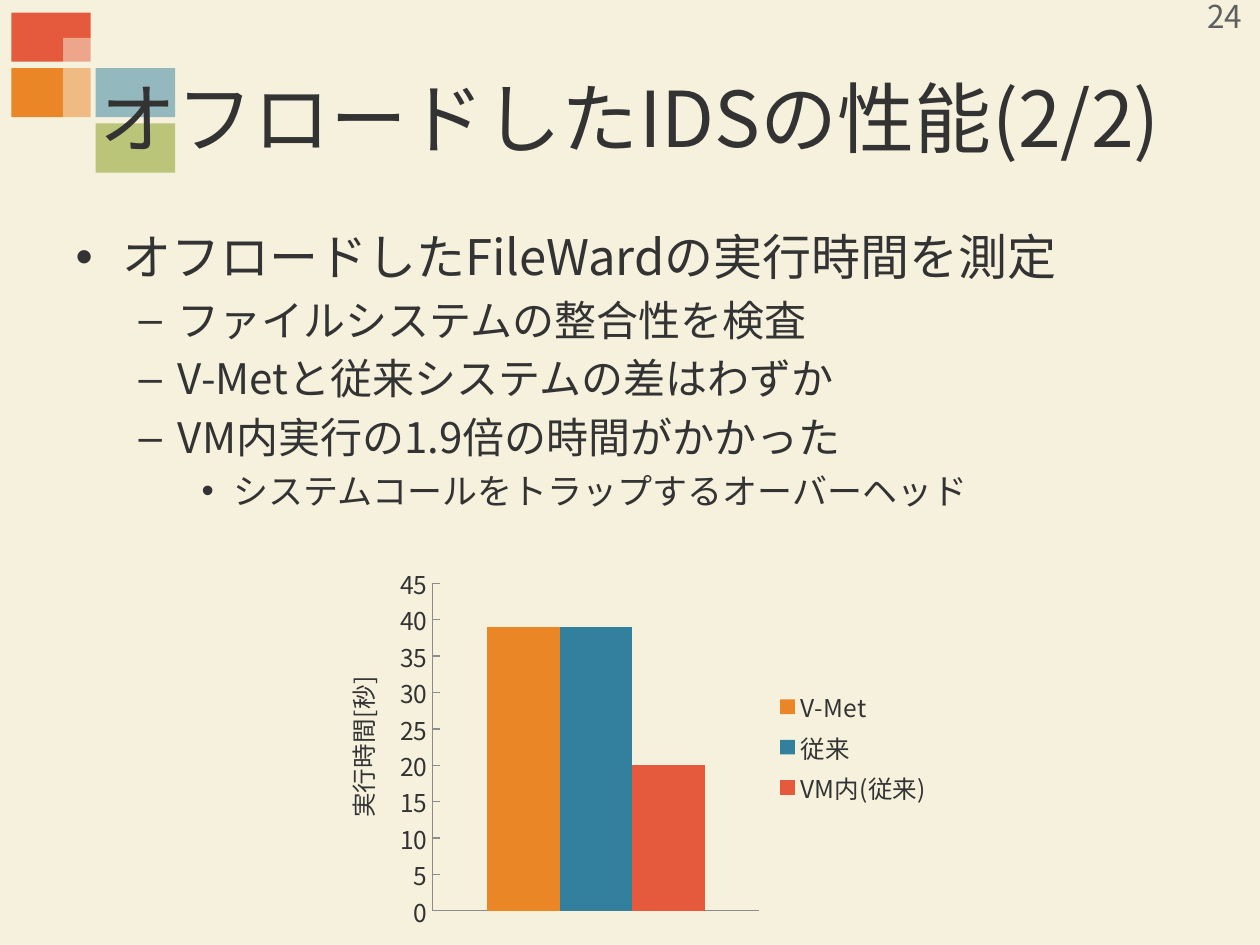
"""Build the slide on the performance of an offloaded IDS."""
from lxml.etree import SubElement
from pptx import Presentation
from pptx.chart.data import CategoryChartData
from pptx.dml.color import RGBColor
from pptx.enum.chart import XL_CHART_TYPE, XL_LEGEND_POSITION, XL_TICK_LABEL_POSITION, XL_TICK_MARK
from pptx.enum.shapes import MSO_SHAPE
from pptx.enum.text import MSO_ANCHOR, MSO_AUTO_SIZE, PP_ALIGN
from pptx.oxml.ns import qn
from pptx.util import Inches, Pt

FONT = "Noto Sans CJK JP"
COLORS = {
    "background": "F5F1DD", "text": "333333", "number": "5F5F5F", "axis": "8C8C8C",
    "red": "E5593C", "green": "829916", "blue": "327F9E", "orange": "EB8627",
}


def rgb(name):
    return RGBColor.from_string(COLORS[name])


def style(font, size, color="text"):
    font.size = Pt(size)
    font.bold = False
    font.color.rgb = rgb(color)
    font.name = FONT
    SubElement(font._rPr, qn("a:ea"), typeface=FONT)


prs = Presentation()
prs.slide_width, prs.slide_height = Inches(10), Inches(7.5)
s = prs.slides.add_slide(prs.slide_layouts[1])
s.background.fill.solid()
s.background.fill.fore_color.rgb = rgb("background")
title, body = s.shapes.title, s.placeholders[1]

squares = [("red", 0.09, 0.1), ("green", 0.76, 0.98), ("blue", 0.76, 0.54), ("orange", 0.09, 0.54)]
for color, x, y in squares:
    sp = s.shapes.add_shape(MSO_SHAPE.RECTANGLE, Inches(x), Inches(y), Inches(0.63), Inches(0.39))
    sp.shadow.inherit = False
    sp.fill.solid()
    sp.fill.fore_color.rgb = rgb(color)
    sp.line.fill.background()

s.shapes._spTree.append(body._element)
body.left, body.top, body.width, body.height = Inches(0.5), Inches(1.75), Inches(9), Inches(4.95)
items = [
    (0, "オフロードしたFileWardの実行時間を測定"),
    (1, "ファイルシステムの整合性を検査"),
    (1, "V-Metと従来システムの差はわずか"),
    (1, "VM内実行の1.9倍の時間がかかった"),
    (2, "システムコールをトラップするオーバーヘッド"),
]
tf = body.text_frame
tf.auto_size = MSO_AUTO_SIZE.NONE
for i, (level, text) in enumerate(items):
    p = tf.add_paragraph() if i else tf.paragraphs[0]
    p.text, p.level = text, level
    style(p.font, 28 - 4 * level)

number = s.shapes.add_textbox(Inches(9.35), Inches(-0.02), Inches(0.74), Inches(0.3))
tf = number.text_frame
tf.word_wrap = True
tf.vertical_anchor = MSO_ANCHOR.MIDDLE
p = tf.paragraphs[0]
p.text, p.alignment = "24", PP_ALIGN.CENTER
style(p.font, 18, "number")

s.shapes._spTree.append(title._element)
title.left, title.top, title.width, title.height = Inches(0.5), Inches(0.3), Inches(9), Inches(1.25)
title.fill.solid()
title.fill.fore_color.rgb = rgb("background")
SubElement(title._element.spPr.find(".//" + qn("a:srgbClr")), qn("a:alpha"), val="50000")
tf = title.text_frame
tf.auto_size = MSO_AUTO_SIZE.NONE
tf.vertical_anchor = MSO_ANCHOR.MIDDLE
p = tf.paragraphs[0]
p.text, p.alignment = "オフロードしたIDSの性能(2/2)", PP_ALIGN.CENTER
style(p.font, 44)

series = [("V-Met", 39, "orange"), ("従来", 39, "blue"), ("VM内(従来)", 20, "red")]
data = CategoryChartData()
data.categories = ["1"]
for name, value, color in series:
    data.add_series(name, [value])
chart = s.shapes.add_chart(
    XL_CHART_TYPE.COLUMN_CLUSTERED, Inches(2.5), Inches(4.43), Inches(5), Inches(3), data
).chart
style(chart.font, 10)
chart.has_title = False
chart.has_legend = True
chart.legend.position = XL_LEGEND_POSITION.RIGHT
chart.legend.include_in_layout = False
style(chart.legend.font, 14)

plot = chart.plots[0]
plot.gap_width, plot.overlap, plot.vary_by_categories = 150, 0, False
for bar, (name, value, color) in zip(plot.series, series):
    bar.format.fill.solid()
    bar.format.fill.fore_color.rgb = rgb(color)

cat_axis, val_axis = chart.category_axis, chart.value_axis
for axis, tick in ((cat_axis, XL_TICK_MARK.NONE), (val_axis, XL_TICK_MARK.INSIDE)):
    axis.has_major_gridlines = False
    axis.major_tick_mark, axis.minor_tick_mark = tick, XL_TICK_MARK.NONE
    axis.format.line.color.rgb = rgb("axis")
    axis.format.line.width = Pt(0.75)
cat_axis.tick_label_position = XL_TICK_LABEL_POSITION.NONE
val_axis.minimum_scale, val_axis.maximum_scale, val_axis.major_unit = 0, 45, 5
style(val_axis.tick_labels.font, 14)
p = val_axis.axis_title.text_frame.paragraphs[0]
r = p.add_run()
r.text = "実行時間[秒]"
style(r.font, 14)

prs.save("out.pptx")
